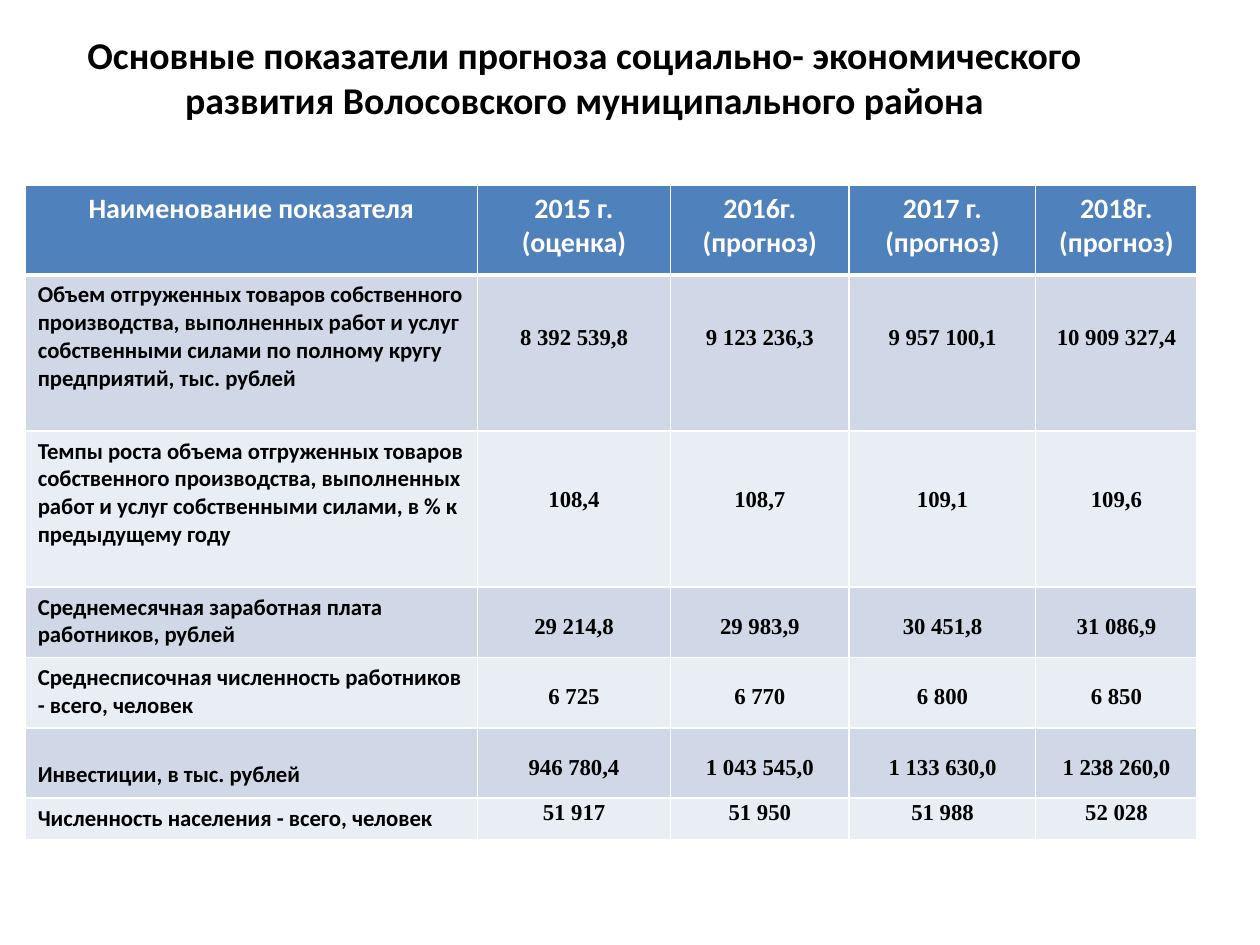
from dataclasses import dataclass
from typing import NamedTuple

from lxml.etree import SubElement
from pptx import Presentation
from pptx.dml.color import RGBColor as RGB
from pptx.enum.text import MSO_ANCHOR as Anchor, PP_ALIGN as Align
from pptx.oxml.ns import qn
from pptx.util import Pt


@dataclass(frozen=True)
class Theme:
    sans: str = "Calibri"
    serif: str = "Times New Roman"
    black: str = "000000"
    white: str = "FFFFFF"
    head: str = "4F81BD"
    bands: tuple = ("D0D8E8", "E9EDF4")
    title: float = 21.6
    header: float = 16
    body: float = 13
    thin: float = 1
    thick: float = 3


class Row(NamedTuple):
    label: str
    values: tuple
    height: float
    drop: float  # inset above the values
    pad: float = 3.6  # inset above the label


THEME = Theme()
TITLE = ("Основные показатели прогноза социально- экономического "
         "развития Волосовского муниципального района")
HEADS = ("Наименование показателя", "2015 г.\n(оценка)", "2016г.\n(прогноз)",
         "2017 г. (прогноз)", "2018г. (прогноз)")
HEAD_H = 51.2
WIDTHS = (258.5, 110.2, 102.2, 106.6, 92.2)
ROWS = (
    Row("Объем отгруженных товаров собственного производства, выполненных "
        "работ и услуг собственными силами по полному кругу предприятий, "
        "тыс. рублей",
        ("8 392 539,8", "9 123 236,3", "9 957 100,1", "10 909 327,4"), 89.2, 29),
    Row("Темпы роста объема отгруженных товаров собственного производства, "
        "выполненных работ и услуг собственными силами, в % к предыдущему году",
        ("108,4", "108,7", "109,1", "109,6"), 89.2, 32),
    Row("Среднемесячная заработная плата работников, рублей",
        ("29 214,8", "29 983,9", "30 451,8", "31 086,9"), 40.2, 15.5),
    Row("Среднесписочная численность работников - всего, человек",
        ("6 725", "6 770", "6 800", "6 850"), 40.2, 15.5),
    Row("Инвестиции, в тыс. рублей",
        ("946 780,4", "1 043 545,0", "1 133 630,0", "1 238 260,0"), 40.2, 15.5, 19),
    Row("Численность населения - всего, человек",
        ("51 917", "51 950", "51 988", "52 028"), 23.8, 1),
)


def write(frame, text: str, size: float, color: str, font: str, align) -> None:
    frame.text = text
    for par in frame.paragraphs:
        par.alignment = align
        par.font.size = Pt(size)
        par.font.bold = True
        par.font.name = font
        par.font.color.rgb = RGB.from_string(color)


def edge(cell, top: float, bottom: float) -> None:
    """Draw white borders, with own widths above and below."""
    props = cell._tc.get_or_add_tcPr()
    sides = {"lnL": THEME.thin, "lnR": THEME.thin, "lnT": top, "lnB": bottom}
    for tag, width in sides.items():
        line = SubElement(props, qn(f"a:{tag}"), w=str(Pt(width)))
        fill = SubElement(line, qn("a:solidFill"))
        SubElement(fill, qn("a:srgbClr"), val=THEME.white)


def paint(cell, color: str, top: float, bottom: float) -> None:
    edge(cell, top, bottom)
    cell.fill.solid()
    cell.fill.fore_color.rgb = RGB.from_string(color)


def add_title(slide) -> None:
    box = slide.shapes.add_textbox(Pt(14.4), Pt(18), Pt(639.4), Pt(79))
    frame = box.text_frame
    frame.word_wrap = True
    frame.vertical_anchor = Anchor.TOP
    frame.margin_top = frame.margin_bottom = 0
    write(frame, TITLE, THEME.title, THEME.black, THEME.sans, Align.CENTER)


def fill_head(table) -> None:
    table.rows[0].height = Pt(HEAD_H)
    for col, text in enumerate(HEADS):
        cell = table.cell(0, col)
        paint(cell, THEME.head, THEME.thin, THEME.thick)
        write(cell.text_frame, text, THEME.header, THEME.white, THEME.sans,
              Align.CENTER)


def fill_row(table, num: int, row: Row) -> None:
    table.rows[num].height = Pt(row.height)
    top = THEME.thick if num == 1 else THEME.thin
    for col, text in enumerate((row.label, *row.values)):
        cell = table.cell(num, col)
        paint(cell, THEME.bands[(num - 1) % 2], top, THEME.thin)
        font, align = THEME.sans, Align.LEFT
        cell.margin_top = Pt(row.pad)
        if col:
            font, align = THEME.serif, Align.CENTER
            cell.margin_top = Pt(row.drop)
            cell.margin_left = cell.margin_right = Pt(0.7)
            cell.margin_bottom = 0
        write(cell.text_frame, text, THEME.body, THEME.black, font, align)


def add_grid(slide) -> None:
    high = HEAD_H + sum(row.height for row in ROWS)
    table = slide.shapes.add_table(len(ROWS) + 1, len(HEADS), Pt(14.4), Pt(106),
                                   Pt(sum(WIDTHS)), Pt(high)).table
    for col, width in zip(table.columns, WIDTHS):
        col.width = Pt(width)
    fill_head(table)
    for num, row in enumerate(ROWS, 1):
        fill_row(table, num, row)


def main() -> None:
    deck = Presentation()
    deck.slide_width, deck.slide_height = Pt(720), Pt(540)
    slide = deck.slides.add_slide(deck.slide_layouts[6])
    add_title(slide)
    add_grid(slide)
    deck.save("out.pptx")


if __name__ == "__main__":
    main()
